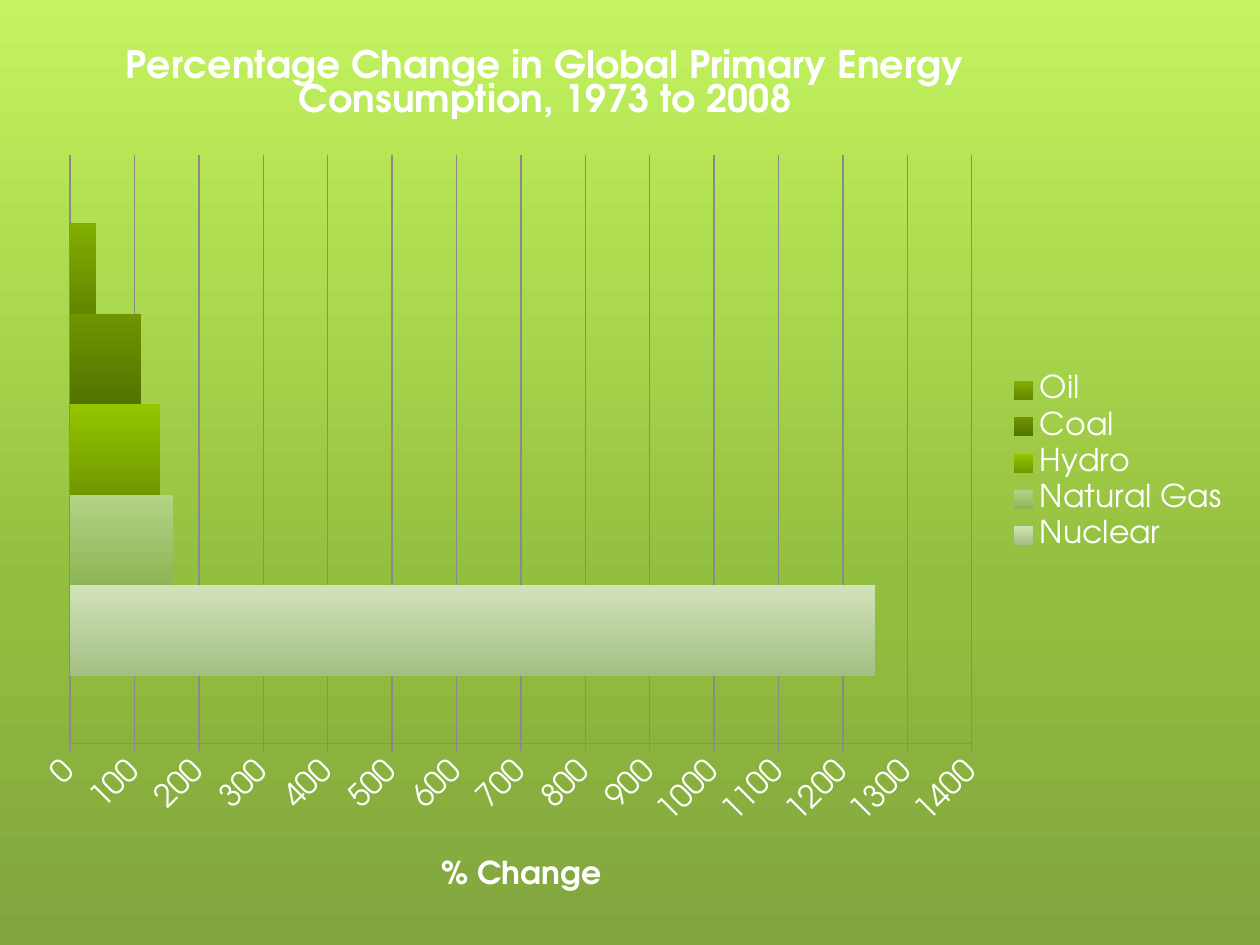
from copy import deepcopy
from pptx import Presentation
from pptx import util as u
from pptx.chart import data as cd
from pptx.dml.color import RGBColor
from pptx.enum import chart as ce
from pptx.oxml import parse_xml
from pptx.oxml.ns import nsdecls, qn

FONT = "TeX Gyre Adventor"
WIDE, HIGH = 10, 7.5
SKY = [(0, "C3F35F"), (0.62, "93BF3F"), (1, "81A53E")]
FUELS = [
    ("Nuclear", 1250, "D1E2B8", "A4BF84"),
    ("Natural Gas", 160, "B3D385", "8DB556"),
    ("Hydro", 140, "94C600", "719800"),
    ("Coal", 110, "6F9500", "547200"),
    ("Oil", 40, "82AE00", "648600"),
]


def tint(code):
    """Turn a hex string into a colour."""
    return RGBColor.from_string(code)


def fade(fill, stops):
    """Fill with a gradient that runs from top to bottom."""
    fill.gradient()
    fill.gradient_angle = 270
    first = fill.gradient_stops[0]._gs
    for _ in stops[2:]:
        first.addnext(deepcopy(first))
    for stop, (share, code) in zip(fill.gradient_stops, stops):
        stop.position = share
        stop.color.rgb = tint(code)


def style(font, size, bold=False):
    """Set the white chart lettering."""
    font.name, font.size, font.bold = FONT, u.Pt(size), bold
    font.color.rgb = tint("FFFFFF")


def place(part, prior, x, y, size=None, inner=False):
    """Lay out a chart part by shares of the chart's size."""
    for old in part.findall(qn("c:layout")):
        part.remove(old)
    rows = [("layoutTarget", "inner")] if inner else []
    rows += [("xMode", "edge"), ("yMode", "edge"), ("x", x), ("y", y)]
    rows += zip("wh", size or ())
    body = "".join(f'<c:{key} val="{val}"/>' for key, val in rows)
    node = parse_xml(f'<c:layout {nsdecls("c")}><c:manualLayout>{body}'
                     "</c:manualLayout></c:layout>")
    if prior:
        part.find(qn(prior)).addnext(node)
    else:
        part.insert(0, node)


def label(title, words, size, x, y):
    """Write and place a chart or axis title."""
    run = title.text_frame.paragraphs[0].add_run()
    run.text = words
    style(run.font, size, True)
    place(title._element, "c:tx", x, y)


def scale(axis):
    """Format the value axis and its grid."""
    axis.minimum_scale, axis.maximum_scale, axis.major_unit = 0, 1400, 100
    axis.major_tick_mark = ce.XL_TICK_MARK.CROSS
    axis.has_major_gridlines = True
    for line in axis.format.line, axis.major_gridlines.format.line:
        line.color.rgb = tint("8A8A8A")
        line.width = u.Pt(0.75)
    style(axis.tick_labels.font, 18)
    axis._element.find(qn("c:txPr")).find(qn("a:bodyPr")).set("rot", "-2700000")
    label(axis.axis_title, "% Change", 18, 0.34, 0.93)


def bars(slide):
    """Add the bar chart of fuels."""
    data = cd.CategoryChartData()
    data.categories = ["1"]
    for name, value, *_ in FUELS:
        data.add_series(name, [value])
    box = [u.Inches(n) for n in (0.17, 0.17, WIDE - 0.33, HIGH - 0.42)]
    chart = slide.shapes.add_chart(
        ce.XL_CHART_TYPE.BAR_CLUSTERED, *box, data).chart
    style(chart.font, 18)
    plot = chart.plots[0]
    plot.gap_width, plot.overlap, plot.vary_by_categories = 150, 0, False
    for bar, (_, _, top, base) in zip(plot.series, FUELS):
        fade(bar.format.fill, [(0, top), (1, base)])
    chart.category_axis.visible = False
    scale(chart.value_axis)
    chart.has_title = True
    label(chart.chart_title, "Percentage Change in Global Primary Energy "
          "Consumption, 1973 to 2008", 21.6, 0.08, 0.02)
    chart.has_legend = True
    key = chart.legend
    key.position = ce.XL_LEGEND_POSITION.RIGHT
    key.include_in_layout = False
    style(key.font, 18)
    place(key._element, "c:legendPos", 0.81, 0.39, (0.18, 0.21))
    area = chart._chartSpace.chart.plotArea
    place(area, None, 0.04, 0.15, (0.74, 0.66), True)


def main():
    """Build and save the slide."""
    deck = Presentation()
    deck.slide_width, deck.slide_height = u.Inches(WIDE), u.Inches(HIGH)
    slide = deck.slides.add_slide(deck.slide_layouts[6])
    fade(slide.background.fill, SKY)
    bars(slide)
    deck.save("out.pptx")


if __name__ == "__main__":
    main()
